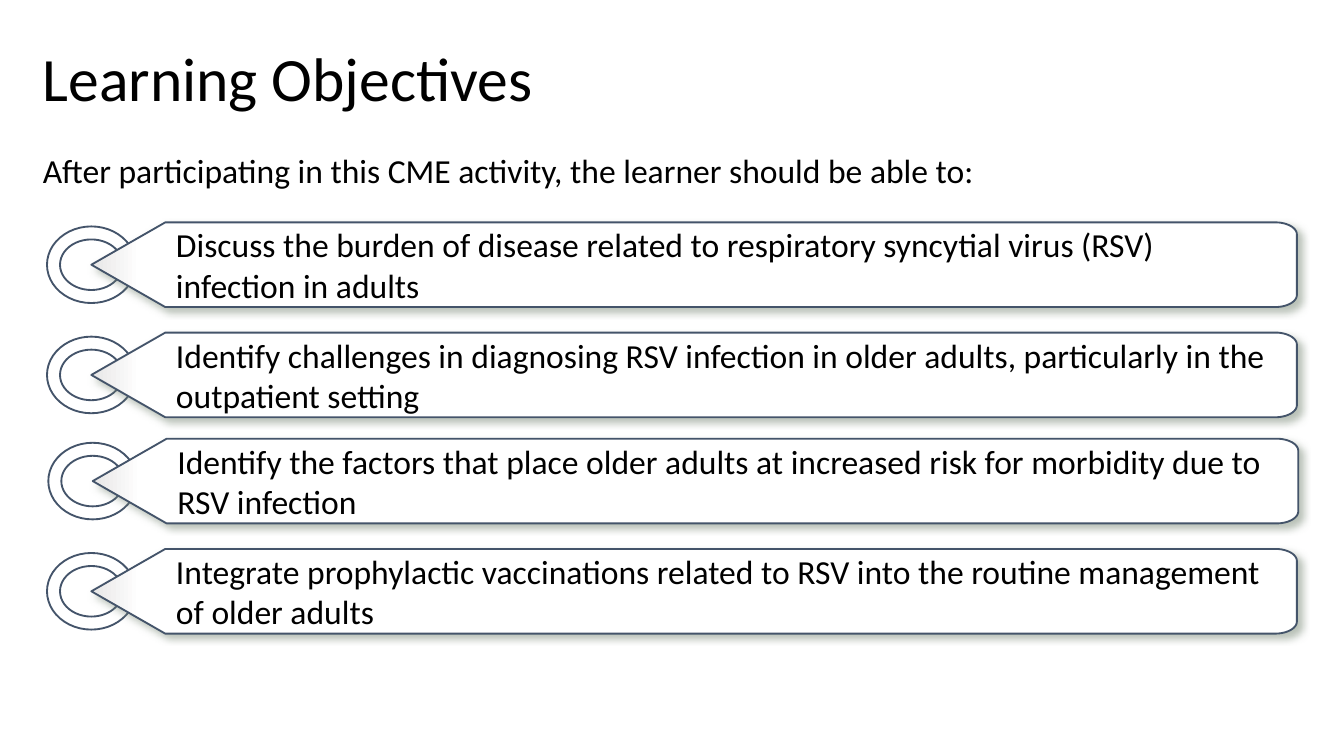
"""Build the learning objectives slide with four ringed callout bars."""
from math import cos, pi, sin

from lxml import etree
from pptx import Presentation, util as u
from pptx.dml.color import RGBColor
from pptx.enum import shapes, text
from pptx.oxml.ns import qn

W = 10
H = W * 9 / 16
FONT, INK, OUTLINE = "Calibri", "000000", "44546A"
TITLE = "Learning Objectives"
INTRO = "After participating in this CME activity, the learner should be able to:"
OBJECTIVES = [
    (0.68, 1.97, "Discuss the burden of disease related to respiratory syncytial virus (RSV) infection in adults"),
    (0.68, 2.79, "Identify challenges in diagnosing RSV infection in older adults, particularly in the outpatient setting"),
    (0.69, 3.58, "Identify the factors that place older adults at increased risk for morbidity due to RSV infection"),
    (0.68, 4.4, "Integrate prophylactic vaccinations related to RSV into the routine management of older adults"),
]
RING_W, RING_H, RING_SHARE = 0.66, 0.57, 0.17
BAR_W, BAR_H, POINT_W = 8.97, 0.63, 0.55
CORNER_W, CORNER_H, STEPS = 0.16, 0.09, 12


def rgb(value):
    return RGBColor.from_string(value)


def write(sp, content, size, anchor, margins=(0.1, 0.05, 0.1, 0.05), spacing=1.0):
    tf = sp.text_frame
    tf.word_wrap = True
    tf.vertical_anchor = anchor
    tf.margin_left, tf.margin_top, tf.margin_right, tf.margin_bottom = map(u.Inches, margins)
    p = tf.paragraphs[0]
    p.alignment = text.PP_ALIGN.LEFT
    p.line_spacing = spacing
    r = p.add_run()
    r.text = content
    r.font.name, r.font.size = FONT, u.Pt(size)
    r.font.color.rgb = rgb(INK)


def outline(sp):
    sp.line.color.rgb = rgb(OUTLINE)
    sp.line.width = u.Pt(1)
    sp.shadow.inherit = False


def add_ring(s, x, y):
    sp = s.shapes.add_shape(shapes.MSO_SHAPE.DONUT, u.Inches(x - RING_W / 2), u.Inches(y - RING_H / 2),
                            u.Inches(RING_W), u.Inches(RING_H))
    sp.adjustments[0] = RING_SHARE
    sp.fill.solid()
    sp.fill.fore_color.rgb = rgb("FFFFFF")
    color = sp._element.spPr.find(qn("a:solidFill"))[0]
    etree.SubElement(color, qn("a:alpha"), val="50000")
    outline(sp)


def add_shadow(sp):
    effects = sp._element.spPr.find(qn("a:effectLst"))
    shadow = etree.SubElement(effects, qn("a:outerShdw"), blurRad=str(u.Pt(4)), dist=str(u.Pt(3)),
                              dir=str(45 * 60000), algn="tl", rotWithShape="0")
    color = etree.SubElement(shadow, qn("a:srgbClr"), val="758572")
    etree.SubElement(color, qn("a:alpha"), val="50000")


def add_bar(s, x, y, content):
    top, bottom, right = y - BAR_H / 2, y + BAR_H / 2, x + BAR_W
    turns = [i * pi / 2 / STEPS for i in range(STEPS + 1)]
    upper = [(right - CORNER_W * (1 - sin(a)), top + CORNER_H * (1 - cos(a))) for a in turns]
    lower = [(px, top + bottom - py) for px, py in reversed(upper)]
    points = [(x + POINT_W, top), *upper, *lower, (x + POINT_W, bottom)]
    builder = s.shapes.build_freeform(u.Inches(x), u.Inches(y))
    builder.add_line_segments([(u.Inches(px), u.Inches(py)) for px, py in points], close=True)
    sp = builder.convert_to_shape()
    sp.fill.gradient()
    sp.fill.gradient_angle = 0
    for stop, (position, color) in zip(sp.fill.gradient_stops, [(0, "E7E6E6"), (0.04, "FFFFFF")]):
        stop.position = position
        stop.color.rgb = rgb(color)
    outline(sp)
    add_shadow(sp)
    write(sp, content, 18, text.MSO_ANCHOR.MIDDLE, (0.63, 0.08, 0.14, 0.08))


def main():
    prs = Presentation()
    prs.slide_width, prs.slide_height = u.Inches(W), u.Inches(H)
    s = prs.slides.add_slide(prs.slide_layouts[6])
    for content, top, height, size, anchor in [
        (TITLE, 0.14, 0.94, 33, text.MSO_ANCHOR.MIDDLE),
        (INTRO, 1.1, 3.54, 18, text.MSO_ANCHOR.TOP),
    ]:
        box = s.shapes.add_textbox(u.Inches(0.22), u.Inches(top), u.Inches(9.58), u.Inches(height))
        write(box, content, size, anchor, spacing=0.9)
    for x, y, content in OBJECTIVES:
        add_ring(s, x, y)
        add_bar(s, x, y, content)
    prs.save("out.pptx")


if __name__ == "__main__":
    main()
